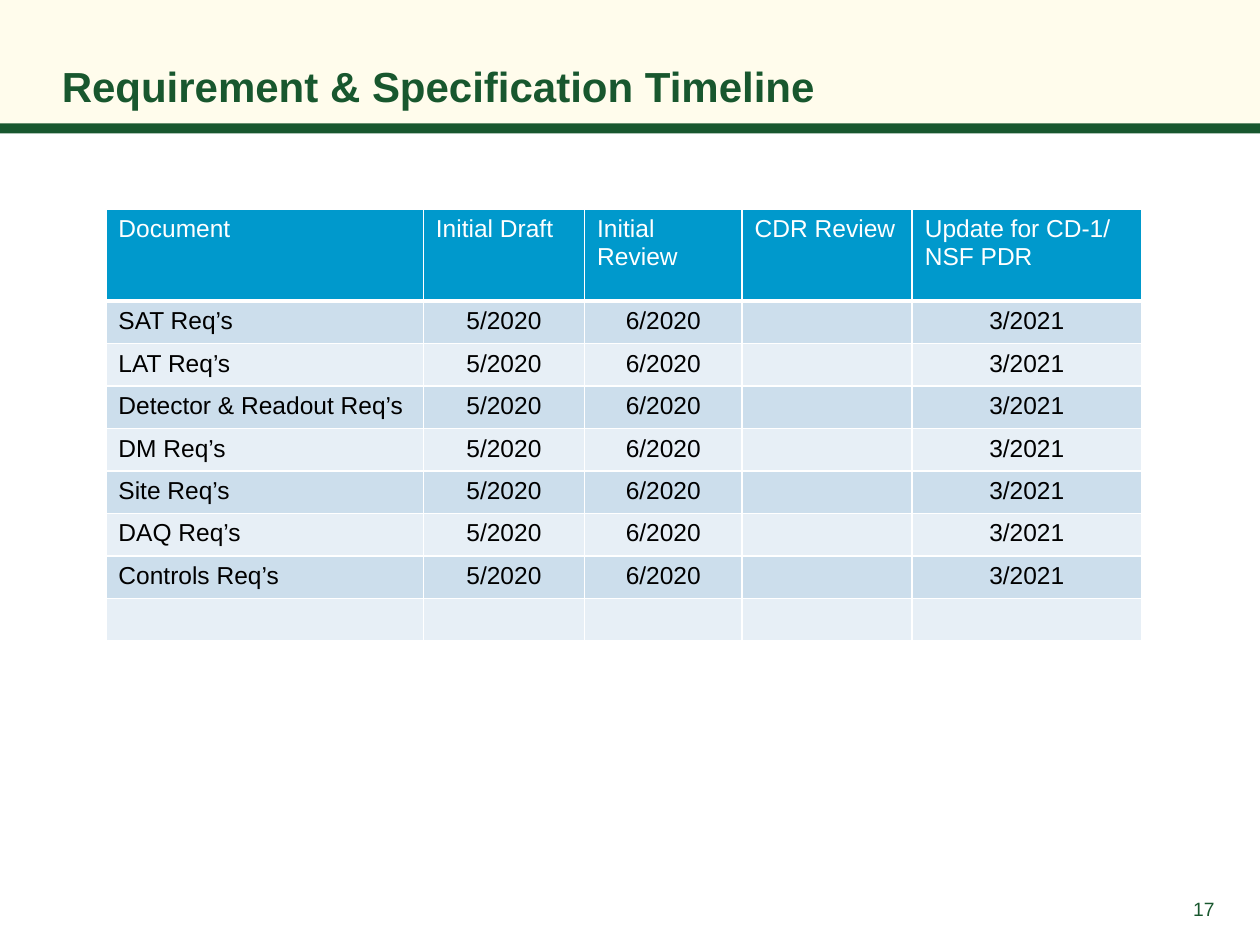
from lxml.etree import SubElement
from pptx import Presentation
from pptx.dml.color import RGBColor
from pptx.enum.shapes import MSO_SHAPE
from pptx.enum.text import MSO_ANCHOR, PP_ALIGN
from pptx.oxml.ns import qn
from pptx.util import Inches, Pt

CREAM = RGBColor(0xFF, 0xFC, 0xEC)
GREEN = RGBColor(0x18, 0x57, 0x2E)
BLUE = RGBColor(0x00, 0x99, 0xCC)
BANDS = (RGBColor(0xCC, 0xDE, 0xEC), RGBColor(0xE7, 0xEF, 0xF6))
WHITE = RGBColor(0xFF, 0xFF, 0xFF)
BLACK = RGBColor(0, 0, 0)

TITLE = "Requirement & Specification Timeline"
PAGE = "17"
HEADER = ["Document", "Initial Draft", "Initial Review", "CDR Review",
          "Update for CD-1/ NSF PDR"]
DOCUMENTS = ["SAT", "LAT", "Detector & Readout", "DM", "Site", "DAQ", "Controls"]
DATES = ["5/2020", "6/2020", "", "3/2021"]
ROWS = [HEADER] + [[f"{name} Req’s"] + DATES for name in DOCUMENTS] + [[""] * 5]

COLUMNS = [2.52, 1.28, 1.25, 1.35, 1.82]
HEAD_HEIGHT, ROW_HEIGHT = 0.73, 0.32
TABLE_LEFT, TABLE_TOP = 0.84, 1.66
STRIPES = [(0, 1.02, CREAM), (0.98, 0.08, GREEN)]  # top, height, colour


def place(shape, *box):
    for name, value in zip(("left", "top", "width", "height"), box):
        setattr(shape, name, Inches(value))


def write(frame, text, size, color, align=PP_ALIGN.LEFT, bold=False):
    para = frame.paragraphs[0]
    para.alignment = align
    if not text:  # an empty line keeps its size in its end mark
        SubElement(para._p, qn("a:endParaRPr"), sz=str(size * 100))
        return
    run = para.add_run()
    run.text = text
    style = {"name": "Arial", "size": Pt(size), "bold": bold}
    for name, value in style.items():
        setattr(run.font, name, value)
    run.font.color.rgb = color


def set_frame(frame, anchor, margins):
    """Anchor the text and set left, top, right and bottom margins."""
    frame.word_wrap = True
    frame.vertical_anchor = anchor
    for side, value in zip(("left", "top", "right", "bottom"), margins):
        setattr(frame, f"margin_{side}", Inches(value))


def add_borders(cell, bottom):
    props = cell._tc.get_or_add_tcPr()
    for side, width in {"L": 1, "R": 1, "T": 1, "B": bottom}.items():
        line = SubElement(props, qn(f"a:ln{side}"), w=str(Pt(width)))
        fill = SubElement(line, qn("a:solidFill"))
        SubElement(fill, qn("a:srgbClr"), val=str(WHITE))


def add_stripes(slide, width):
    for top, height, color in STRIPES:
        stripe = slide.shapes.add_shape(
            MSO_SHAPE.RECTANGLE, 0, Inches(top), width, Inches(height))
        stripe.shadow.inherit = False
        stripe.fill.solid()
        stripe.fill.fore_color.rgb = color
        stripe.line.fill.background()


def add_title(slide):
    title = slide.shapes.title
    slide.shapes._spTree.append(title._element)  # in front of the stripes
    place(title, 0.49, 0.06, 8.86, 0.82)
    set_frame(title.text_frame, MSO_ANCHOR.BOTTOM, (0, 0, 0, 0))
    write(title.text_frame, TITLE, 24, GREEN, bold=True)


def add_page(slide):
    box = slide.shapes.add_textbox(0, 0, 0, 0)
    place(box, 9.37, 6.91, 0.35, 0.59)
    set_frame(box.text_frame, MSO_ANCHOR.MIDDLE, (0.08, 0.06, 0.08, 0.05))
    write(box.text_frame, PAGE, 11, GREEN, PP_ALIGN.RIGHT)


def add_timeline(slide):
    heights = [HEAD_HEIGHT] + [ROW_HEIGHT] * (len(ROWS) - 1)
    box = (TABLE_LEFT, TABLE_TOP, sum(COLUMNS), sum(heights))
    table = slide.shapes.add_table(
        len(ROWS), len(COLUMNS), *map(Inches, box)).table
    for column, width in zip(table.columns, COLUMNS):
        column.width = Inches(width)
    for row, height in zip(table.rows, heights):
        row.height = Inches(height)
    for r, texts in enumerate(ROWS):
        head = r == 0
        for c, text in enumerate(texts):
            cell = table.cell(r, c)
            add_borders(cell, 3 if head else 1)
            cell.fill.solid()
            cell.fill.fore_color.rgb = BLUE if head else BANDS[(r - 1) % 2]
            align = PP_ALIGN.LEFT if head or c == 0 else PP_ALIGN.CENTER
            write(cell.text_frame, text, 14, WHITE if head else BLACK, align)


def main():
    deck = Presentation()
    deck.slide_width, deck.slide_height = Inches(10), Inches(7.5)
    slide = deck.slides.add_slide(deck.slide_layouts[5])
    add_stripes(slide, deck.slide_width)
    add_page(slide)
    add_title(slide)
    add_timeline(slide)
    deck.save("out.pptx")


if __name__ == "__main__":
    main()
